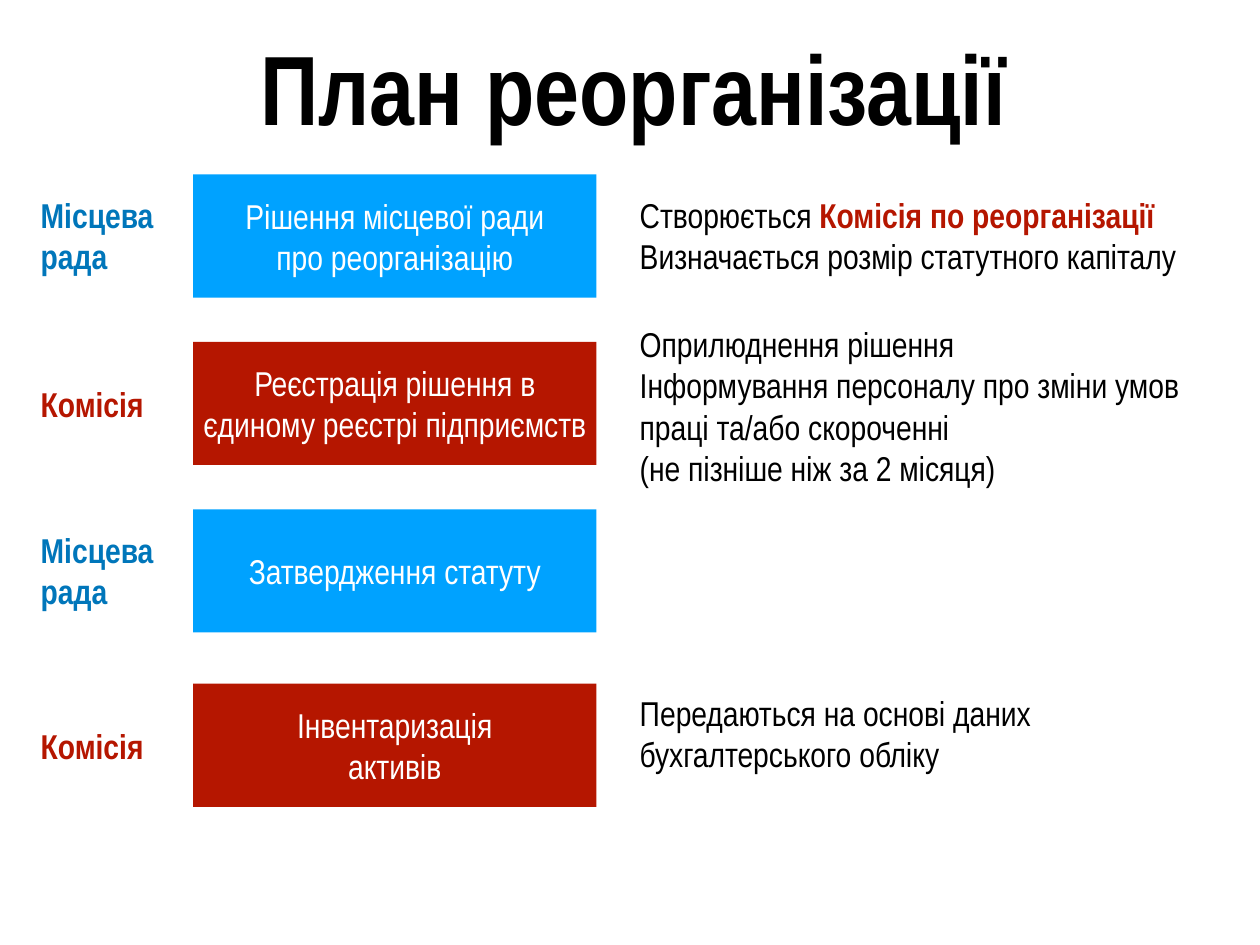
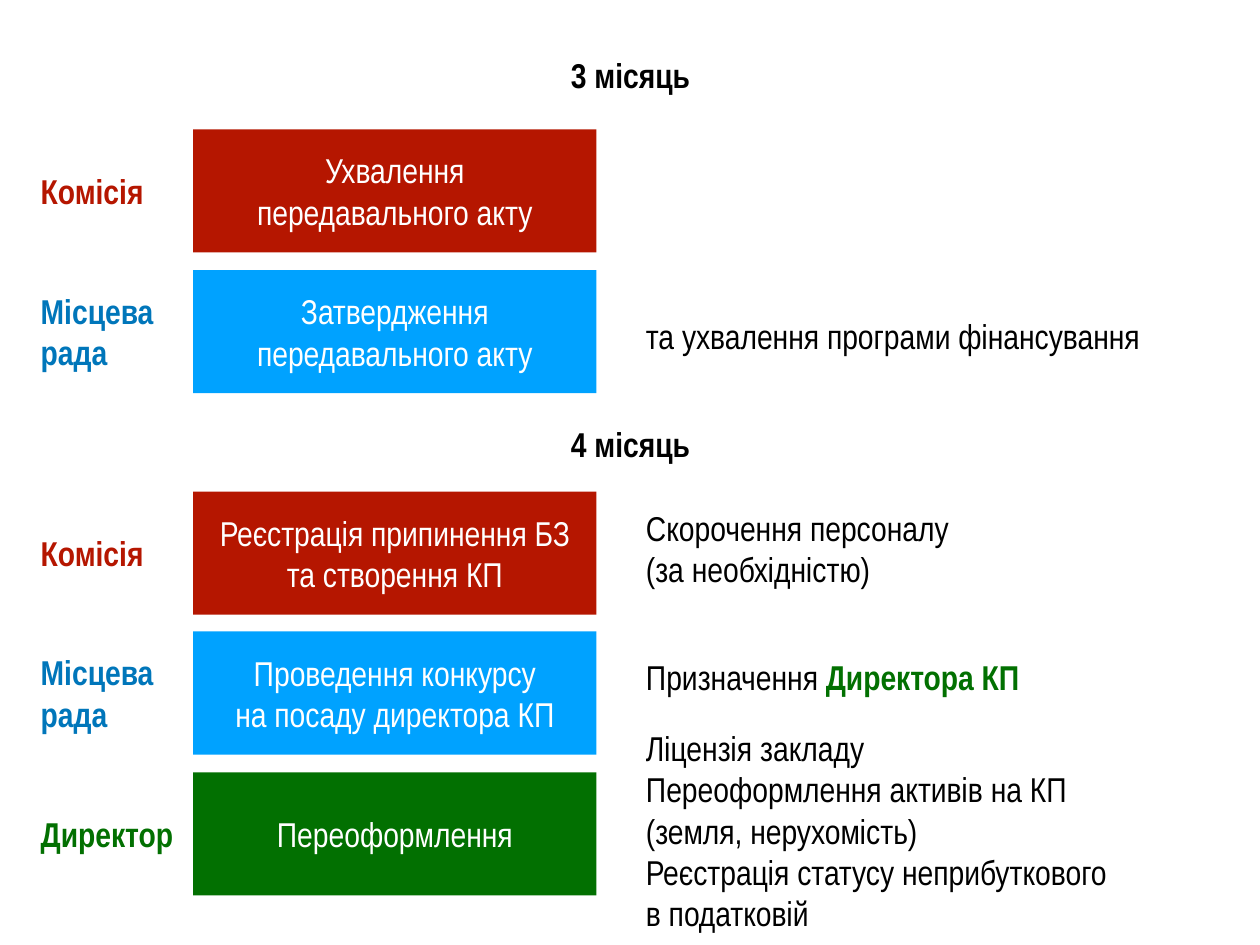
from dataclasses import dataclass

from pptx import Presentation
from pptx.dml.color import RGBColor
from pptx.enum.shapes import MSO_SHAPE as Shape
from pptx.enum.text import MSO_ANCHOR as Anchor, MSO_AUTO_SIZE as Fit, PP_ALIGN as Align

PX = 9144
SLIDE_W, SLIDE_H = 1422, 1067
FONT = "Arial Narrow"
INSET = 6
LINE_H = 47

WHITE = RGBColor(0xFF, 0xFF, 0xFF)
BLACK = RGBColor(0x00, 0x00, 0x00)
SKY = RGBColor(0x00, 0xA2, 0xFF)
BLUE = RGBColor(0x00, 0x76, 0xBA)
RED = RGBColor(0xB5, 0x16, 0x00)
GREEN = RGBColor(0x02, 0x70, 0x01)

LABEL_X = 40
TASK_X, TASK_W, TASK_H = 218, 455, 139
NOTE_W = 679


@dataclass
class Role:
    label: str
    label_w: int
    ink: RGBColor
    fill: RGBColor


@dataclass
class Step:
    top: int
    role: Role
    task: str
    note: tuple = ()
    note_lines: int = 1
    note_shift: int = 0


COUNCIL = Role("Місцева\nрада", 140, BLUE, SKY)
COMMISSION = Role("Комісія", 129, RED, RED)
DIRECTOR = Role("Директор", 163, GREEN, GREEN)

PLAN_STEPS = [
    Step(197, COUNCIL, "Рішення місцевої ради\nпро реорганізацію",
         ([("Створюється ", None), ("Комісія по реорганізації\n", RED),
           ("Визначається розмір статутного капіталу", None)],), 2),
    Step(386, COMMISSION, "Реєстрація рішення в єдиному реєстрі підприємств",
         ("Оприлюднення рішення\n"
          "Інформування персоналу про зміни умов праці та/або скороченні\n"
          "(не пізніше ніж за 2 місяця)",), 4, 3),
    Step(575, COUNCIL, "Затвердження статуту"),
    Step(772, COMMISSION, "Інвентаризація\nактивів",
         ("Передаються на основі даних бухгалтерського обліку",), 2, -13),
]

MONTHS = [
    ("3 місяць", 55, [
        Step(146, COMMISSION, "Ухвалення\nпередавального акту"),
        Step(305, COUNCIL, "Затвердження\nпередавального акту",
             ("та ухвалення програми фінансування",), 1, 4),
    ]),
    ("4 місяць", 472, [
        Step(555, COMMISSION, "Реєстрація припинення БЗ\nта створення КП",
             ("Скорочення персоналу\n(за необхідністю)",), 2, -5),
        Step(713, COUNCIL, "Проведення конкурсу\nна посаду директора КП",
             ([("Призначення ", None), ("Директора КП", GREEN)],), 1, -19),
        Step(872, DIRECTOR, "Переоформлення",
             ("Ліцензія закладу", "Переоформлення активів на КП",
              "(земля, нерухомість)",
              "Реєстрація статусу неприбуткового\nв податковій"), 5, -4),
    ]),
]


def px(*lengths):
    return [length * PX for length in lengths]


def write(shape, *paragraphs, size=28, color=BLACK, bold=False,
          align=Align.LEFT, wrap=True, fit=Fit.NONE):
    frame = shape.text_frame
    frame.auto_size = fit
    frame.word_wrap = wrap
    frame.vertical_anchor = Anchor.MIDDLE
    frame.margin_left = frame.margin_right = INSET * PX
    frame.margin_top = frame.margin_bottom = INSET * PX
    for index, content in enumerate(paragraphs):
        paragraph = frame.add_paragraph() if index else frame.paragraphs[0]
        paragraph.alignment = align
        pieces = [(content, None)] if isinstance(content, str) else content
        for words, accent in pieces:
            for number, line in enumerate(words.split("\n")):
                if number:
                    paragraph.add_line_break()
                if not line:
                    continue
                run = paragraph.add_run()
                run.text = line
                run.font.name = FONT
                run.font.size = size * 12700
                run.font.bold = bold or accent is not None
                run.font.color.rgb = accent or color


def add_label(slide, left, middle, width, lines, *paragraphs, **style):
    height = 2 * INSET + LINE_H * lines
    box = slide.shapes.add_textbox(*px(left, middle - height // 2, width, height))
    write(box, *paragraphs, fit=Fit.SHAPE_TO_FIT_TEXT, **style)


def add_step(slide, step, note_x):
    role = step.role
    middle = step.top + TASK_H // 2
    task = slide.shapes.add_shape(
        Shape.RECTANGLE, *px(TASK_X, step.top, TASK_W, TASK_H))
    task.shadow.inherit = False
    task.fill.solid()
    task.fill.fore_color.rgb = role.fill
    task.line.fill.background()
    write(task, step.task, color=WHITE, align=Align.CENTER)
    add_label(slide, LABEL_X, middle, role.label_w, role.label.count("\n") + 1,
              role.label, color=role.ink, bold=True, wrap=False)
    if step.note:
        add_label(slide, note_x, middle + step.note_shift, NOTE_W,
                  step.note_lines, *step.note)


def build_plan(deck):
    slide = deck.slides.add_slide(deck.slide_layouts[5])
    title = slide.shapes.title
    title.left, title.top, title.width, title.height = px(108, 23, 1214, 148)
    write(title, "План реорганізації", size=80, bold=True, align=Align.CENTER)
    for step in PLAN_STEPS:
        add_step(slide, step, 716)


def build_months(deck):
    slide = deck.slides.add_slide(deck.slide_layouts[6])
    for month, top, steps in MONTHS:
        add_label(slide, 638, top + 29, 147, 1, month,
                  bold=True, align=Align.CENTER, wrap=False)
        for step in steps:
            add_step(slide, step, 723)


def main():
    deck = Presentation()
    deck.slide_width, deck.slide_height = px(SLIDE_W, SLIDE_H)
    build_plan(deck)
    build_months(deck)
    deck.save("out.pptx")


if __name__ == "__main__":
    main()
